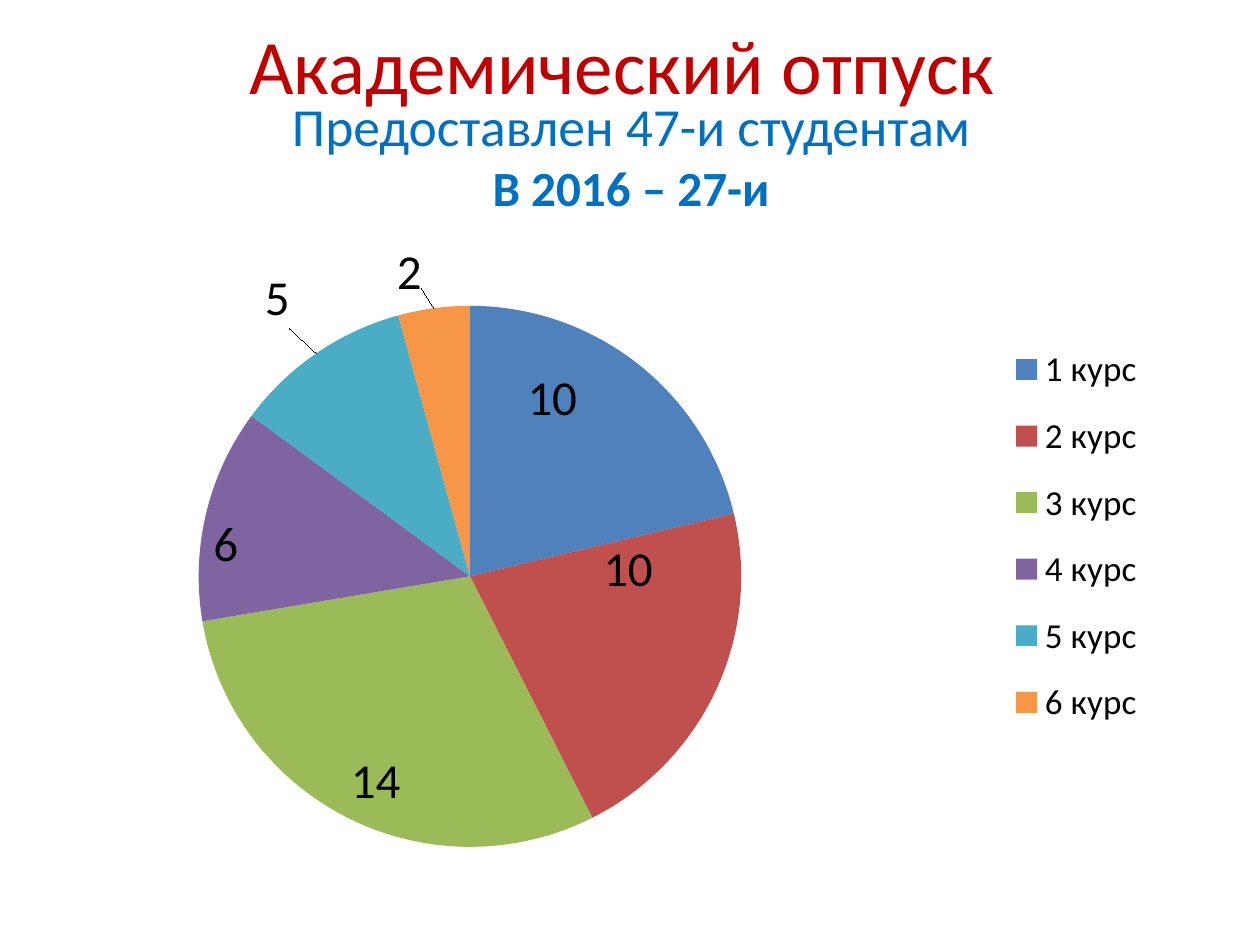
from lxml import etree
from pptx import Presentation
from pptx.chart.data import CategoryChartData
from pptx.dml.color import RGBColor
from pptx.enum.chart import XL_CHART_TYPE, XL_LABEL_POSITION, XL_LEGEND_POSITION
from pptx.enum.text import MSO_ANCHOR, PP_ALIGN
from pptx.util import Inches, Pt

PIE = XL_CHART_TYPE.PIE
IN_END, OUT_END = XL_LABEL_POSITION.INSIDE_END, XL_LABEL_POSITION.OUTSIDE_END
RIGHT = XL_LEGEND_POSITION.RIGHT
MIDDLE, CENTER = MSO_ANCHOR.MIDDLE, PP_ALIGN.CENTER
NS = "http://schemas.openxmlformats.org/drawingml/2006/chart"

THEME = {
    "font": "Calibri", "title": "C00000", "sub": "0070C0", "text": "000000",
    "base": 18, "legend": 20, "label": 28,
}

# Content: box, then lines of (text, size, colour, bold)
HEADS = [
    ((0.51, 0.04, 9, 0.93), [("Академический отпуск ", 44, "title", False)]),
    ((0.51, 0.76, 9, 0.93), [
        ("Предоставлен 47-и студентам", 30.6, "sub", False),
        ("В 2016 – 27-и", 28.1, "sub", True),
    ]),
]
CHART = (0.67, 1.92, 9, 4.95)
PLOT = (0.02, 0.1, 0.64, 0.87)
LEGEND = (0.8, 0.13, 0.15, 0.68)
# Name, students, colour, label place, label shift
YEARS = [
    ("1 курс", 10, "4F81BD", IN_END, (-0.05, 0)),
    ("2 курс", 10, "C0504D", IN_END, (-0.05, -0.14)),
    ("3 курс", 14, "9BBB59", IN_END, None),
    ("4 курс", 6, "8064A2", IN_END, None),
    ("5 курс", 5, "4BACC6", OUT_END, (-0.02, -0.03)),
    ("6 курс", 2, "F79646", OUT_END, (-0.01, -0.02)),
]


def style(font, size, color="text", bold=False):
    font.name, font.size, font.bold = THEME["font"], Pt(size), bold
    font.color.rgb = RGBColor.from_string(THEME[color])


def layout(parent, spot, pairs):
    """Give a chart part a manual layout at child index spot."""
    for old in parent.findall(f"{{{NS}}}layout"):
        parent.remove(old)
    node = etree.Element(f"{{{NS}}}layout")
    manual = etree.SubElement(node, f"{{{NS}}}manualLayout")
    for tag, val in pairs:
        etree.SubElement(manual, f"{{{NS}}}{tag}").set("val", str(val))
    parent.insert(spot, node)


def frame(box):
    modes = [("xMode", "edge"), ("yMode", "edge")]
    return modes + list(zip("xywh", box))


deck = Presentation()
deck.slide_width, deck.slide_height = Inches(10), Inches(7.5)
slide = deck.slides.add_slide(deck.slide_layouts[6])

# Headings
for box, lines in HEADS:
    text = slide.shapes.add_textbox(*map(Inches, box)).text_frame
    text.word_wrap, text.vertical_anchor = True, MIDDLE
    for i, (words, size, color, bold) in enumerate(lines):
        para = text.add_paragraph() if i else text.paragraphs[0]
        para.alignment = CENTER
        run = para.add_run()
        run.text = words
        style(run.font, size, color, bold)

# Pie
data = CategoryChartData()
data.categories = [year[0] for year in YEARS]
data.add_series("Series 1", [year[1] for year in YEARS])
chart = slide.shapes.add_chart(PIE, *map(Inches, CHART), data).chart
chart.has_title = False
style(chart.font, THEME["base"])
plot = chart.plots[0]
plot.vary_by_categories = True
series = plot.series[0]
labels = series.data_labels
labels.show_value, labels.position = True, IN_END
style(labels.font, THEME["label"])

# Slices and their labels
for i, (_, _, color, place, shift) in enumerate(YEARS):
    point = series.points[i]
    point.format.fill.solid()
    point.format.fill.fore_color.rgb = RGBColor.from_string(color)
    if shift:
        style(point.data_label.font, THEME["label"])
        point.data_label.position = place
        node = chart.element.xpath(f".//c:dLbl[c:idx/@val='{i}']")[0]
        layout(node, 1, zip("xy", shift))

# Legend and plot area
chart.has_legend = True
chart.legend.position = RIGHT
chart.legend.include_in_layout = False
style(chart.legend.font, THEME["legend"])
layout(chart.element.xpath(".//c:legend")[0], 1, frame(LEGEND))
layout(chart.element.xpath(".//c:plotArea")[0], 0,
       [("layoutTarget", "inner")] + frame(PLOT))

deck.save("out.pptx")
